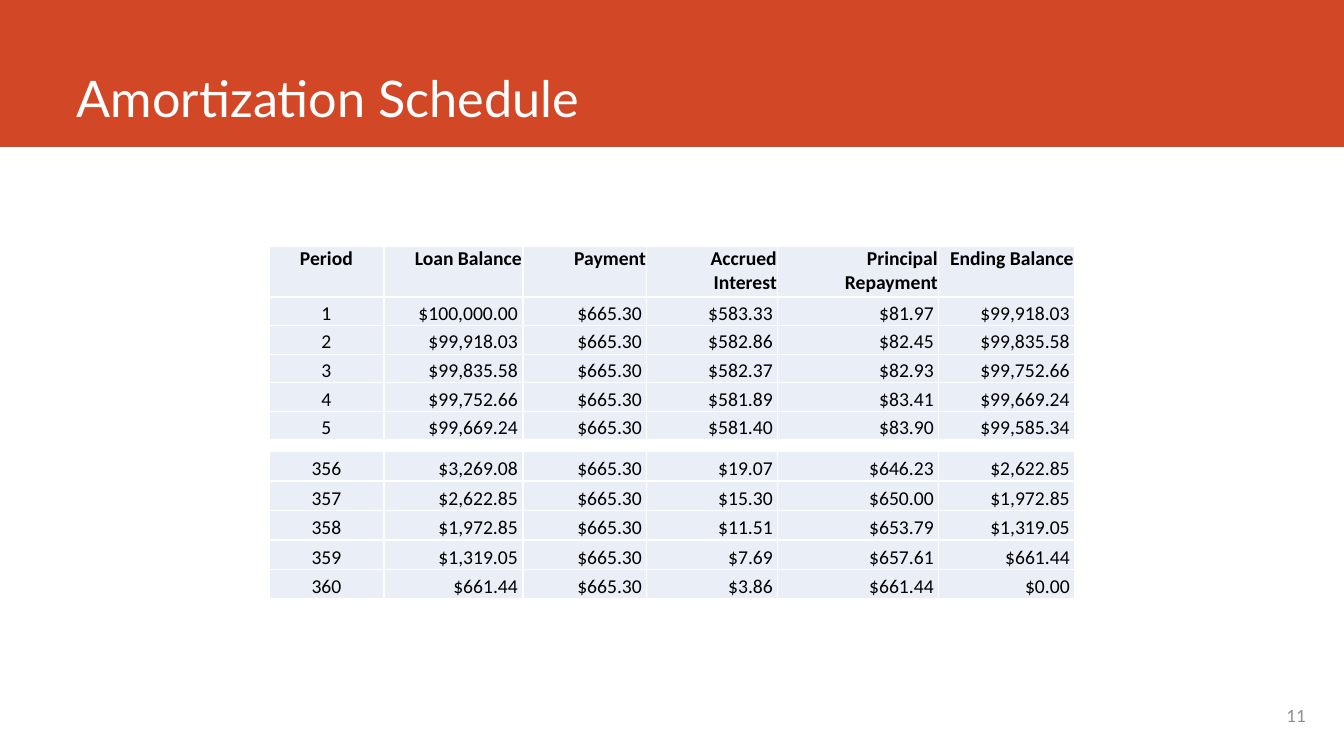
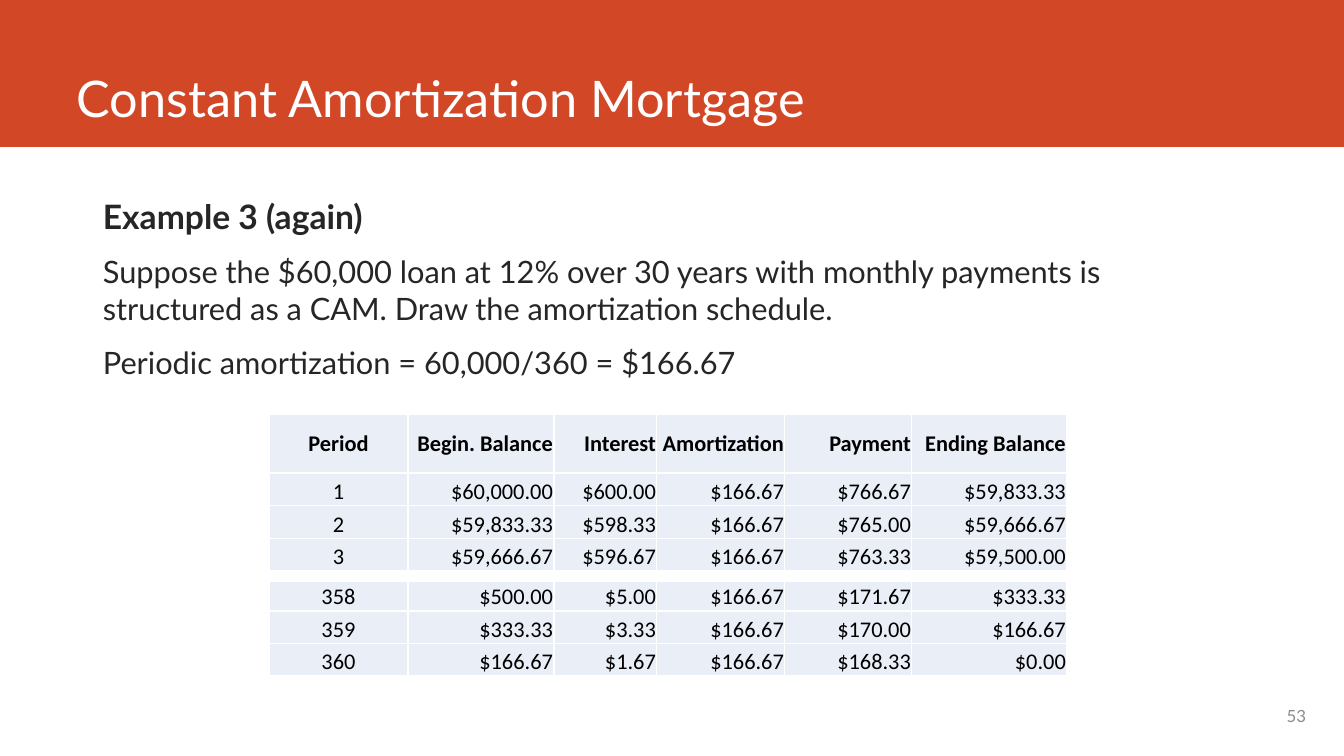
from pptx import Presentation
from pptx.dml.color import RGBColor
from pptx.enum.shapes import MSO_SHAPE
from pptx.enum.text import MSO_ANCHOR, PP_ALIGN
from pptx.oxml import parse_xml
from pptx.oxml.ns import nsdecls
from pptx.util import Pt

SCALE = 914400 / 100.8
WIDE, HIGH = 1344, 756
LEFT = 269

RED = RGBColor(0xD2, 0x47, 0x26)
WHITE = RGBColor(0xFF, 0xFF, 0xFF)
PALE = RGBColor(0xEA, 0xEF, 0xF7)
BLACK = RGBColor(0x00, 0x00, 0x00)
DARK = RGBColor(0x26, 0x26, 0x26)
GRAY = RGBColor(0x8C, 0x8C, 0x8C)

TITLE = dict(name="Lato", size=36, color=WHITE)
HEAD = dict(name="Lato", size=24, color=DARK, bold=True)
BODY = dict(name="Lato", size=22, color=DARK)
PAGE = dict(name="Lato", size=12, color=GRAY)
CELL = dict(name="Calibri", color=BLACK)


def px(num):
    return round(num * SCALE)


def put(obj, **vals):
    for key, val in vals.items():
        setattr(obj, key, val)


def style(font, look):
    for key, val in look.items():
        if key == "color":
            font.color.rgb = val
        else:
            setattr(font, key, Pt(val) if key == "size" else val)


def edge(cell):
    """Draw a thin white line on all four sides of a cell."""
    props = cell._tc.get_or_add_tcPr()
    for side in "LRTB":
        props.append(parse_xml(
            f'<a:ln{side} {nsdecls("a")} w="12700"><a:solidFill>'
            f'<a:srgbClr val="{WHITE}"/></a:solidFill></a:ln{side}>'))


class Deck:
    def __init__(self):
        self.file = Presentation()
        put(self.file, slide_width=px(WIDE), slide_height=px(HIGH))

    def start(self, title, page):
        """Add a slide with its band, title and page number."""
        self.slide = self.file.slides.add_slide(self.file.slide_layouts[6])
        self.band(0, 0, WIDE, 147)
        self.text((67, 0, 1185, 133), [(title, TITLE)], MSO_ANCHOR.BOTTOM)
        self.text((955, 696, 361, 40), [(page, PAGE)], MSO_ANCHOR.MIDDLE,
                  alignment=PP_ALIGN.RIGHT)

    def band(self, *box):
        shape = self.slide.shapes.add_shape(MSO_SHAPE.RECTANGLE, *map(px, box))
        shape.shadow.inherit = False
        shape.fill.solid()
        shape.fill.fore_color.rgb = RED
        shape.line.fill.background()

    def text(self, box, lines, anchor=MSO_ANCHOR.TOP, **form):
        frame = self.slide.shapes.add_textbox(*map(px, box)).text_frame
        put(frame, word_wrap=True, vertical_anchor=anchor)
        for i, (words, look) in enumerate(lines):
            para = frame.add_paragraph() if i else frame.paragraphs[0]
            put(para, **form)
            run = para.add_run()
            run.text = words
            style(run.font, look)

    def table(self, top, high, first, cols, rows, size, pad=1, head=None):
        """Add a table; the rows after the first share the rest of its height."""
        rows = [row.split() for row in rows]
        if head:
            rows.insert(0, head)
        grid = self.slide.shapes.add_table(
            len(rows), len(cols), px(LEFT), px(top), px(sum(cols)), px(high)).table
        put(grid, first_row=False, horz_banding=False)
        for col, wide in zip(grid.columns, cols):
            col.width = px(wide)
        rest = (high - first) / (len(rows) - 1)
        for r, row in enumerate(rows):
            grid.rows[r].height = px(rest if r else first)
            top_row = bool(head) and r == 0
            anchor = MSO_ANCHOR.BOTTOM
            if top_row:
                anchor = MSO_ANCHOR.MIDDLE if size == 16 else MSO_ANCHOR.TOP
            for c, words in enumerate(row):
                cell = grid.cell(r, c)
                edge(cell)
                cell.fill.solid()
                cell.fill.fore_color.rgb = PALE
                put(cell, vertical_anchor=anchor, margin_left=px(1),
                    margin_right=px(pad if c and not top_row else 1),
                    margin_top=px(1), margin_bottom=0)
                para = cell.text_frame.paragraphs[0]
                para.alignment = PP_ALIGN.RIGHT if c else PP_ALIGN.CENTER
                run = para.add_run()
                run.text = words
                style(run.font, dict(CELL, size=size, bold=top_row))


def main():
    deck = Deck()

    deck.start("Amortization Schedule", "11")
    cols = [115, 139, 124, 131, 161, 136]
    deck.table(246, 194, 51, cols, [
        "1 $100,000.00 $665.30 $583.33 $81.97 $99,918.03",
        "2 $99,918.03 $665.30 $582.86 $82.45 $99,835.58",
        "3 $99,835.58 $665.30 $582.37 $82.93 $99,752.66",
        "4 $99,752.66 $665.30 $581.89 $83.41 $99,669.24",
        "5 $99,669.24 $665.30 $581.40 $83.90 $99,585.34",
    ], 14, pad=5, head=["Period", "Loan Balance", "Payment", "Accrued Interest",
                        "Principal Repayment", "Ending Balance"])
    deck.table(451, 148, 30, cols, [
        "356 $3,269.08 $665.30 $19.07 $646.23 $2,622.85",
        "357 $2,622.85 $665.30 $15.30 $650.00 $1,972.85",
        "358 $1,972.85 $665.30 $11.51 $653.79 $1,319.05",
        "359 $1,319.05 $665.30 $7.69 $657.61 $661.44",
        "360 $661.44 $665.30 $3.86 $661.44 $0.00",
    ], 14, pad=5)

    deck.start("Constant Amortization Mortgage", "53")
    deck.text((93, 191, 1159, 204), [
        ("Example 3 (again)", HEAD),
        ("Suppose the $60,000 loan at 12% over 30 years with monthly payments is "
         "structured as a CAM. Draw the amortization schedule.", BODY),
        ("Periodic amortization = 60,000/360 = $166.67", BODY),
    ], space_before=Pt(6), space_after=Pt(6))
    cols = [139, 146, 103, 128, 127, 155]
    deck.table(414, 157, 59, cols, [
        "1 $60,000.00 $600.00 $166.67 $766.67 $59,833.33",
        "2 $59,833.33 $598.33 $166.67 $765.00 $59,666.67",
        "3 $59,666.67 $596.67 $166.67 $763.33 $59,500.00",
    ], 16, head=["Period", "Begin. Balance", "Interest", "Amortization",
                 "Payment", "Ending Balance"])
    deck.table(581, 95, 30, cols, [
        "358 $500.00 $5.00 $166.67 $171.67 $333.33",
        "359 $333.33 $3.33 $166.67 $170.00 $166.67",
        "360 $166.67 $1.67 $166.67 $168.33 $0.00",
    ], 16)

    deck.file.save("out.pptx")


if __name__ == "__main__":
    main()
